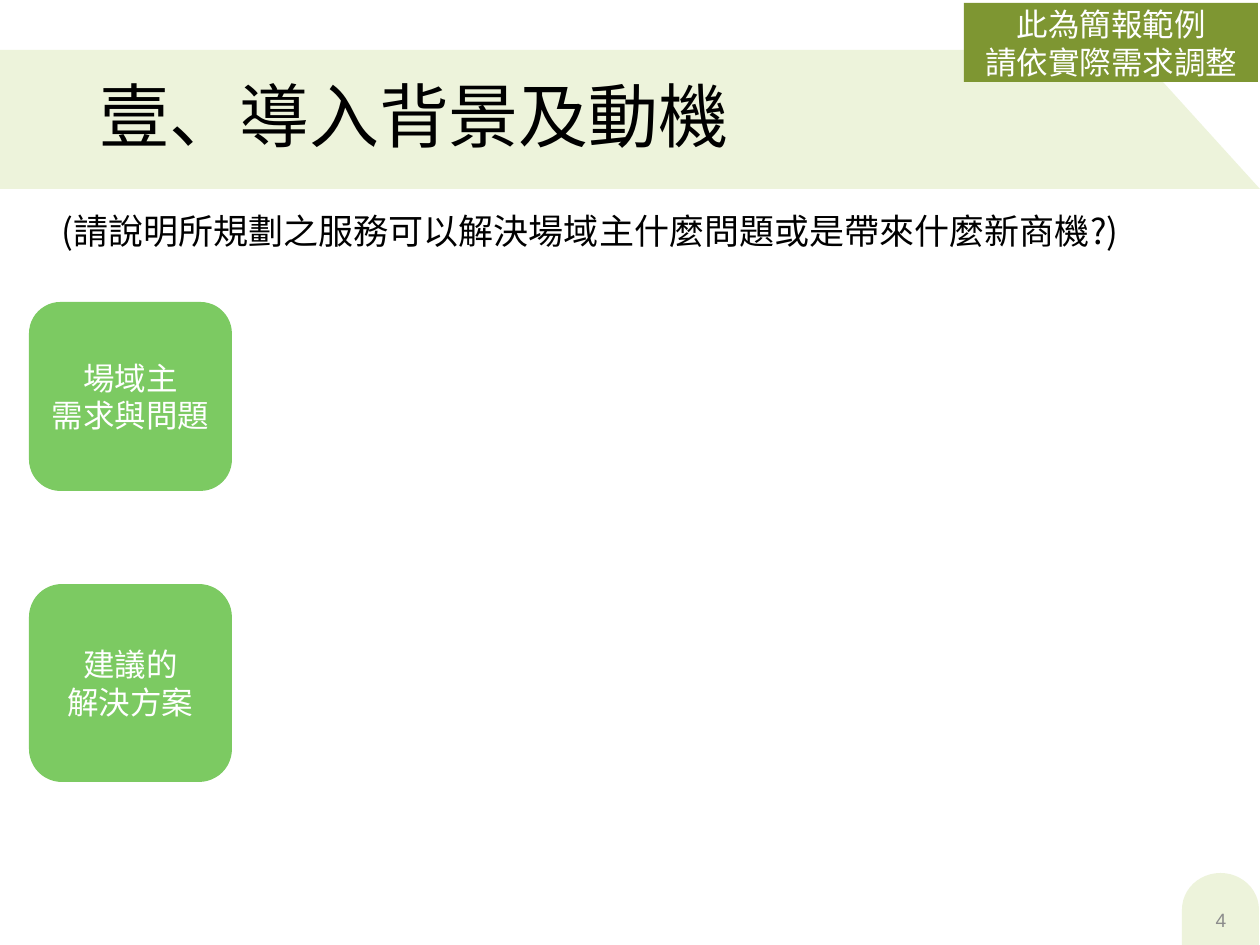
import pptx
import pptx.dml.color
import pptx.enum.shapes
import pptx.enum.text
import pptx.util
from lxml import etree

PX = 914400 / 126  # EMU in one px
CJK = "Noto Sans CJK SC"
SHAPES = pptx.enum.shapes.MSO_SHAPE
ALIGN = pptx.enum.text.PP_ALIGN
ANCHOR = pptx.enum.text.MSO_ANCHOR

PALE, OLIVE, GREEN = "EDF3DB", "7E9632", "7CCA62"
WHITE, BLACK, GREY = "FFFFFF", "000000", "8C8C8C"


def emu(px):
    return pptx.util.Emu(round(px * PX))


def color(hex_string):
    return pptx.dml.color.RGBColor.from_string(hex_string)


def write(shape, text, *, size=18, font=CJK, ink=BLACK, align=ALIGN.LEFT,
          anchor=ANCHOR.MIDDLE, spacing=None):
    """Write each line of the text as a paragraph of the shape."""
    frame = shape.text_frame
    frame.word_wrap = True
    frame.vertical_anchor = anchor
    frame.text = text
    for paragraph in frame.paragraphs:
        paragraph.alignment = align
        if spacing:
            paragraph.line_spacing = spacing
        for run in paragraph.runs:
            run.font.size = pptx.util.Pt(size)
            run.font.name = font
            run.font.color.rgb = color(ink)
            latin = run.font._element.find(pptx.oxml.ns.qn("a:latin"))
            east_asian = etree.Element(pptx.oxml.ns.qn("a:ea"), typeface=CJK)
            latin.addnext(east_asian)


class SlideBuilder:
    """Holds the current slide and the look of its elements."""

    def __init__(self, slide):
        self.slide = slide

    def paint(self, shape, fill):
        shape.shadow.inherit = False
        shape.fill.solid()
        shape.fill.fore_color.rgb = color(fill)
        shape.line.fill.background()
        return shape

    def polygon(self, points, fill):
        builder = self.slide.shapes.build_freeform(*points[0], scale=PX)
        builder.add_line_segments(points[1:], close=True)
        return self.paint(builder.convert_to_shape(), fill)

    def block(self, kind, box, fill, text=None):
        shape = self.slide.shapes.add_shape(kind, *map(emu, box))
        if text:
            write(shape, text, font="Arial", ink=WHITE, align=ALIGN.CENTER)
        return self.paint(shape, fill)

    def label(self, box, text, **text_format):
        shape = self.slide.shapes.add_textbox(*map(emu, box))
        write(shape, text, **text_format)
        return shape


def main():
    presentation = pptx.Presentation()
    presentation.slide_width = emu(1260)
    presentation.slide_height = emu(945)
    builder = SlideBuilder(
        presentation.slides.add_slide(presentation.slide_layouts[6]))

    # Title band and page number tab
    builder.polygon([(0, 50), (1134, 50), (1260, 189), (0, 189)], PALE)
    tab = builder.block(SHAPES.FLOWCHART_DELAY, (1184, 871, 73, 77), PALE)
    tab.rotation = 270
    builder.label((87, 50, 1086, 139), "壹、導入背景及動機", size=40, spacing=0.9)
    builder.label((1187, 895, 68, 50), "4", size=11, font="Arial", ink=GREY,
                  align=ALIGN.CENTER)

    # Guiding question
    builder.label((49, 203, 1184, 55),
                  "(請說明所規劃之服務可以解決場域主什麼問題或是帶來什麼新商機?)",
                  size=20, anchor=ANCHOR.TOP)

    # Sample notice in the corner
    builder.block(SHAPES.RECTANGLE, (964, 3, 294, 79), OLIVE,
                  "此為簡報範例\n請依實際需求調整")

    # Topic cards
    for top, height, text in [(302, 189, "場域主\n需求與問題"),
                              (584, 198, "建議的\n解決方案")]:
        builder.block(SHAPES.ROUNDED_RECTANGLE, (29, top, 203, height), GREEN, text)

    presentation.save("out.pptx")


if __name__ == "__main__":
    main()
